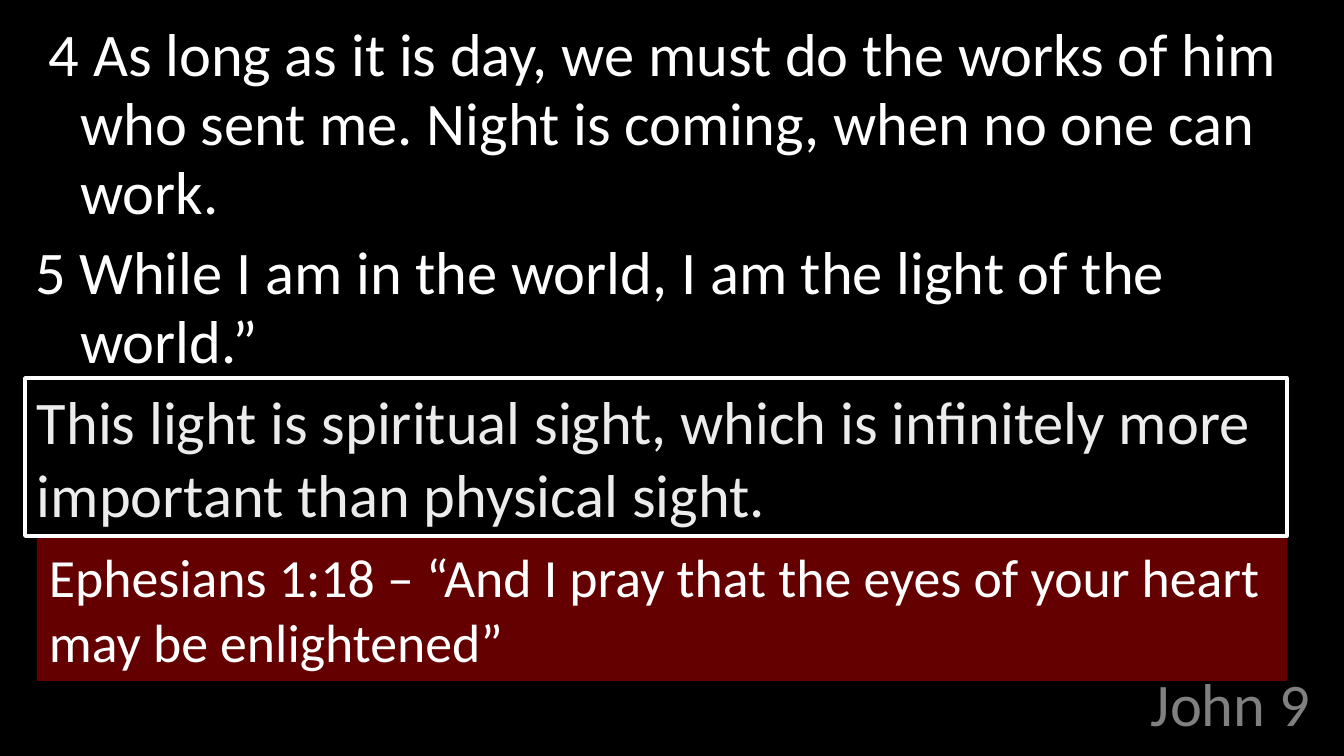
"""Build the John 9 scripture slide with two highlighted comments."""
from lxml import etree
from pptx import Presentation
from pptx.dml.color import RGBColor
from pptx.enum.shapes import MSO_SHAPE
from pptx.enum.text import MSO_ANCHOR, MSO_AUTO_SIZE, PP_ALIGN
from pptx.oxml.ns import qn
from pptx.util import Emu, Pt

ROUNDED = MSO_SHAPE.ROUNDED_RECTANGLE
TOP, BOTTOM = MSO_ANCHOR.TOP, MSO_ANCHOR.BOTTOM
LEFT, RIGHT = PP_ALIGN.LEFT, PP_ALIGN.RIGHT
NO_AUTOFIT = MSO_AUTO_SIZE.NONE
TITLE_AND_CONTENT = 1

FONT = "Calibri"
COLORS = {
    "black": "000000",
    "white": "FFFFFF",
    "gray": "808080",
    "pale": "ECECEC",
    "red": "640000",
}

SLIDE_SIZE = (1344, 756)
TITLE = "John 9"
TITLE_AREA = (854, 673, 468, 71)
VERSES = [
    " 4 As long as it is day, we must do the works of him who sent me. "
    "Night is coming, when no one can work.",
    "5 While I am in the world, I am the light of the world.”",
]
VERSES_AREA = (23, 15, 1300, 640)
VERSE_INDENT = 45
COMMENTS = [
    {
        "text": "Ephesians 1:18 – “And I pray that the eyes of your heart may be enlightened”",
        "area": (37, 538, 1250, 143),
        "fill": "red", "line": None, "size": 32, "color": "white",
    },
    {
        "text": "This light is spiritual sight, which is infinitely more important than physical sight.",
        "area": (25, 378, 1262, 158),
        "fill": "black", "line": "white", "size": 36, "color": "pale",
    },
]


def px(length):
    return Emu(round(length * 914400 / 121))


def color(name):
    return RGBColor.from_string(COLORS[name])


def place(shape, area):
    shape.left, shape.top, shape.width, shape.height = map(px, area)


def set_frame(frame, anchor):
    frame.word_wrap = True
    frame.auto_size = NO_AUTOFIT
    frame.vertical_anchor = anchor


def write(para, text, size, color_name, align=LEFT, spacing=1.0):
    para.alignment = align
    para.line_spacing = spacing
    span = para.add_run()
    span.text = text
    span.font.name = FONT
    span.font.size = Pt(size)
    span.font.color.rgb = color(color_name)


def add_title(page):
    title = page.shapes.title
    place(title, TITLE_AREA)
    set_frame(title.text_frame, BOTTOM)
    write(title.text_frame.paragraphs[0], TITLE, 36, "gray", RIGHT, 0.8)


def add_verses(page):
    body = page.placeholders[1]
    place(body, VERSES_AREA)
    frame = body.text_frame
    set_frame(frame, TOP)
    for index, verse in enumerate(VERSES):
        para = frame.add_paragraph() if index else frame.paragraphs[0]
        write(para, verse, 36, "white", spacing=0.95)
        para.space_before = Pt(7)
        properties = para._p.get_or_add_pPr()
        properties.set("marL", str(px(VERSE_INDENT)))
        properties.set("indent", str(-px(VERSE_INDENT)))
        etree.SubElement(properties, qn("a:buNone"))


def add_comment(page, comment):
    box = page.shapes.add_shape(ROUNDED, *map(px, comment["area"]))
    box.adjustments[0] = 0
    box.shadow.inherit = False
    box.fill.solid()
    box.fill.fore_color.rgb = color(comment["fill"])
    if comment["line"]:
        box.line.color.rgb = color(comment["line"])
        box.line.width = Pt(2)
    else:
        box.line.fill.background()
    set_frame(box.text_frame, TOP)
    write(box.text_frame.paragraphs[0], comment["text"], comment["size"], comment["color"])


def main():
    deck = Presentation()
    deck.slide_width, deck.slide_height = map(px, SLIDE_SIZE)
    page = deck.slides.add_slide(deck.slide_layouts[TITLE_AND_CONTENT])
    page.background.fill.solid()
    page.background.fill.fore_color.rgb = color("black")
    add_title(page)
    add_verses(page)
    for comment in COMMENTS:
        add_comment(page, comment)
    deck.save("out.pptx")


if __name__ == "__main__":
    main()
